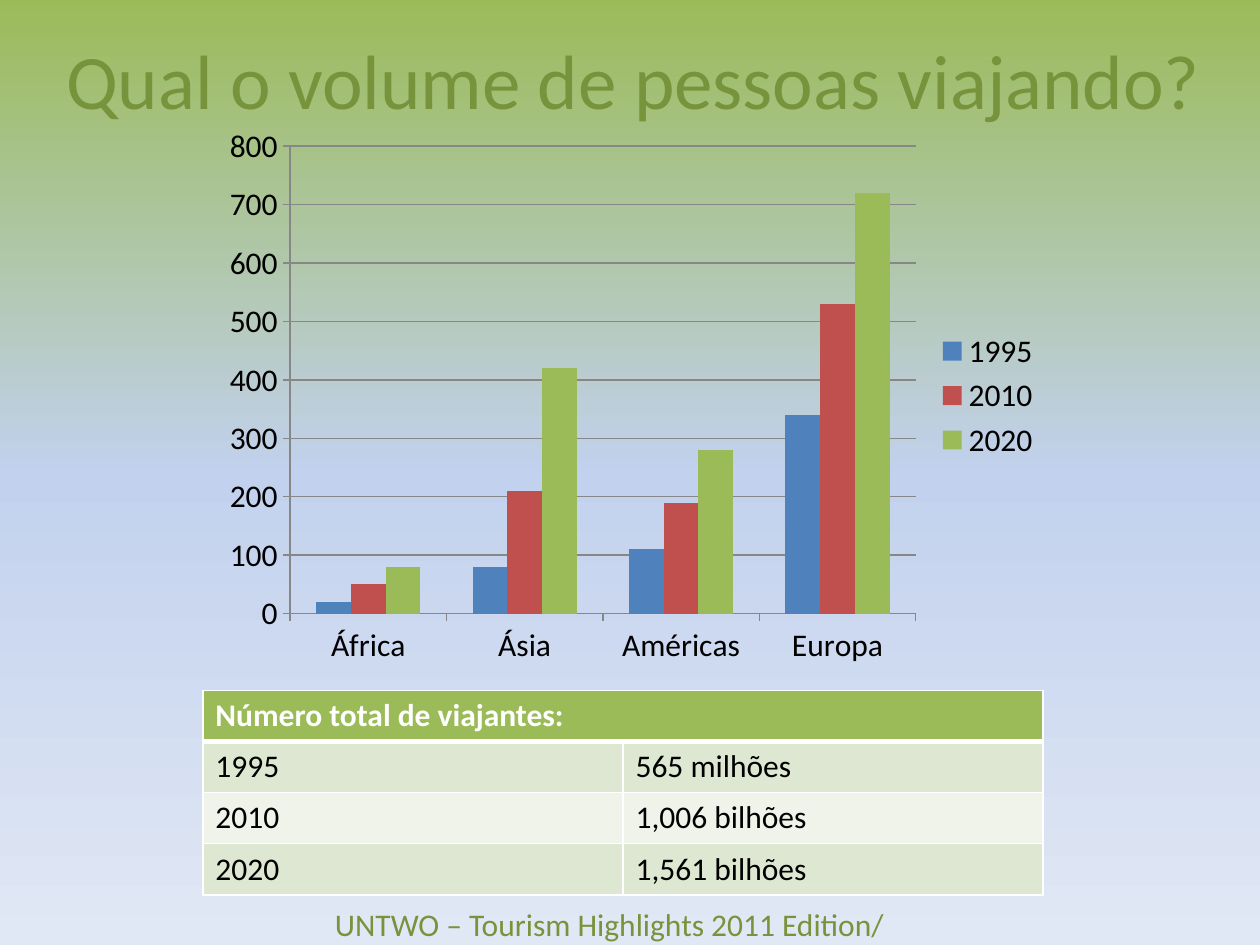
from copy import deepcopy
from dataclasses import dataclass

from lxml.etree import SubElement
from pptx import Presentation
from pptx.chart.data import CategoryChartData as ChartData
from pptx.dml.color import RGBColor as Color
from pptx.enum.chart import XL_CHART_TYPE as Kind, XL_LEGEND_POSITION as Side, XL_TICK_MARK as Tick
from pptx.enum.text import MSO_ANCHOR as Anchor, MSO_AUTO_SIZE as Fit, PP_ALIGN as Align
from pptx.oxml.ns import qn
from pptx.util import Inches, Pt


@dataclass(frozen=True)
class Theme:
    font: str = "Calibri"
    big: int = 44
    body: int = 18
    olive: str = "77933C"
    green: str = "9BBB59"
    black: str = "000000"
    white: str = "FFFFFF"
    grid: str = "878787"
    bands: tuple = ("DEE7D1", "EFF3EA")
    sky: tuple = ((0, "9BBB59"), (0.5, "C2D1ED"), (1, "E1E8F5"))


@dataclass(frozen=True)
class Box:
    left: float
    top: float
    width: float
    height: float

    def emu(self) -> tuple:
        return tuple(Inches(v) for v in (self.left, self.top, self.width, self.height))


@dataclass(frozen=True)
class Series:
    name: str
    vals: tuple
    color: str


@dataclass(frozen=True)
class Label:
    text: str
    box: Box
    size: int
    align: Align = Align.LEFT
    anchor: Anchor = Anchor.TOP
    wrap: bool = True


THEME = Theme()

LABELS = (
    Label("Qual o volume de pessoas viajando?", Box(0.28, 0, 9.5, 1.25),
          THEME.big, Align.CENTER, Anchor.MIDDLE),
    Label("UNTWO – Tourism Highlights 2011 Edition/", Box(2.56, 7.13, 4.61, 0.4),
          THEME.body, wrap=False),
)
REGIONS = ("África", "Ásia", "Américas", "Europa")
SERIES = (
    Series("1995", (20, 80, 110, 340), "4F81BD"),
    Series("2010", (50, 210, 190, 530), "C0504D"),
    Series("2020", (80, 420, 280, 720), "9BBB59"),
)
HEAD = "Número total de viajantes:"
TOTALS = (("1995", "565 milhões"), ("2010", "1,006 bilhões"), ("2020", "1,561 bilhões"))


def style(font, size: int, color: str, bold: bool = False) -> None:
    font.name, font.size, font.bold = THEME.font, Pt(size), bold
    font.color.rgb = Color.from_string(color)


def paint(slide) -> None:
    """Fill the background with the three-stop gradient."""
    fill = slide.background.fill
    fill.gradient()
    fill.gradient_angle = 270
    stops = slide.element.find(".//" + qn("a:gsLst"))
    stops.append(deepcopy(stops[-1]))
    for stop, (place, color) in zip(fill.gradient_stops, THEME.sky):
        stop.position = place
        stop.color.rgb = Color.from_string(color)


def add_label(slide, label: Label) -> None:
    frame = slide.shapes.add_textbox(*label.box.emu()).text_frame
    frame.word_wrap = label.wrap
    frame.auto_size = Fit.NONE if label.wrap else Fit.SHAPE_TO_FIT_TEXT
    frame.vertical_anchor = label.anchor
    para = frame.paragraphs[0]
    para.text, para.alignment = label.text, label.align
    style(para.font, label.size, THEME.olive)


def add_chart(slide, box: Box) -> None:
    data = ChartData()
    data.categories = REGIONS
    for item in SERIES:
        data.add_series(item.name, item.vals)
    chart = slide.shapes.add_chart(Kind.COLUMN_CLUSTERED, *box.emu(), data).chart
    style(chart.font, THEME.body, THEME.black)
    chart.has_title = False
    chart.has_legend = True
    chart.legend.position = Side.RIGHT
    chart.legend.include_in_layout = False

    # Columns
    plot = chart.plots[0]
    plot.gap_width, plot.overlap, plot.vary_by_categories = 150, 0, False
    for bar, item in zip(plot.series, SERIES):
        bar.format.fill.solid()
        bar.format.fill.fore_color.rgb = Color.from_string(item.color)

    # Axes
    scale = chart.value_axis
    scale.minimum_scale, scale.maximum_scale, scale.major_unit = 0, 800, 100
    scale.has_major_gridlines = True
    for axis in (scale, chart.category_axis):
        axis.major_tick_mark = Tick.OUTSIDE
    for part in (scale, chart.category_axis, scale.major_gridlines):
        part.format.line.width = Pt(0.75)
        part.format.line.color.rgb = Color.from_string(THEME.grid)


def edge(cell, side: str, width: float) -> None:
    line = SubElement(cell._tc.get_or_add_tcPr(), qn(f"a:ln{side}"), w=str(Pt(width)))
    fill = SubElement(line, qn("a:solidFill"))
    SubElement(fill, qn("a:srgbClr"), val=THEME.white)


def add_table(slide, box: Box) -> None:
    rows = ((HEAD, ""),) + TOTALS
    table = slide.shapes.add_table(len(rows), 2, *box.emu()).table
    for r, row in enumerate(rows):
        top = r == 0
        for c, text in enumerate(row):
            cell = table.cell(r, c)
            for side in "LRTB":
                thick = (top and side == "B") or (r == 1 and side == "T")
                edge(cell, side, 3 if thick else 1)
            cell.fill.solid()
            color = THEME.green if top else THEME.bands[(r - 1) % 2]
            cell.fill.fore_color.rgb = Color.from_string(color)
            para = cell.text_frame.paragraphs[0]
            para.text = text
            style(para.font, THEME.body, THEME.white if top else THEME.black, top)
    table.cell(0, 0).merge(table.cell(0, 1))


def main() -> None:
    deck = Presentation()
    deck.slide_width, deck.slide_height = Inches(10), Inches(7.5)
    slide = deck.slides.add_slide(deck.slide_layouts[6])
    paint(slide)
    title, source = LABELS
    add_label(slide, title)
    add_chart(slide, Box(1.69, 0.92, 6.67, 4.44))
    add_table(slide, Box(1.61, 5.48, 6.67, 1.62))
    add_label(slide, source)
    deck.save("out.pptx")


if __name__ == "__main__":
    main()
